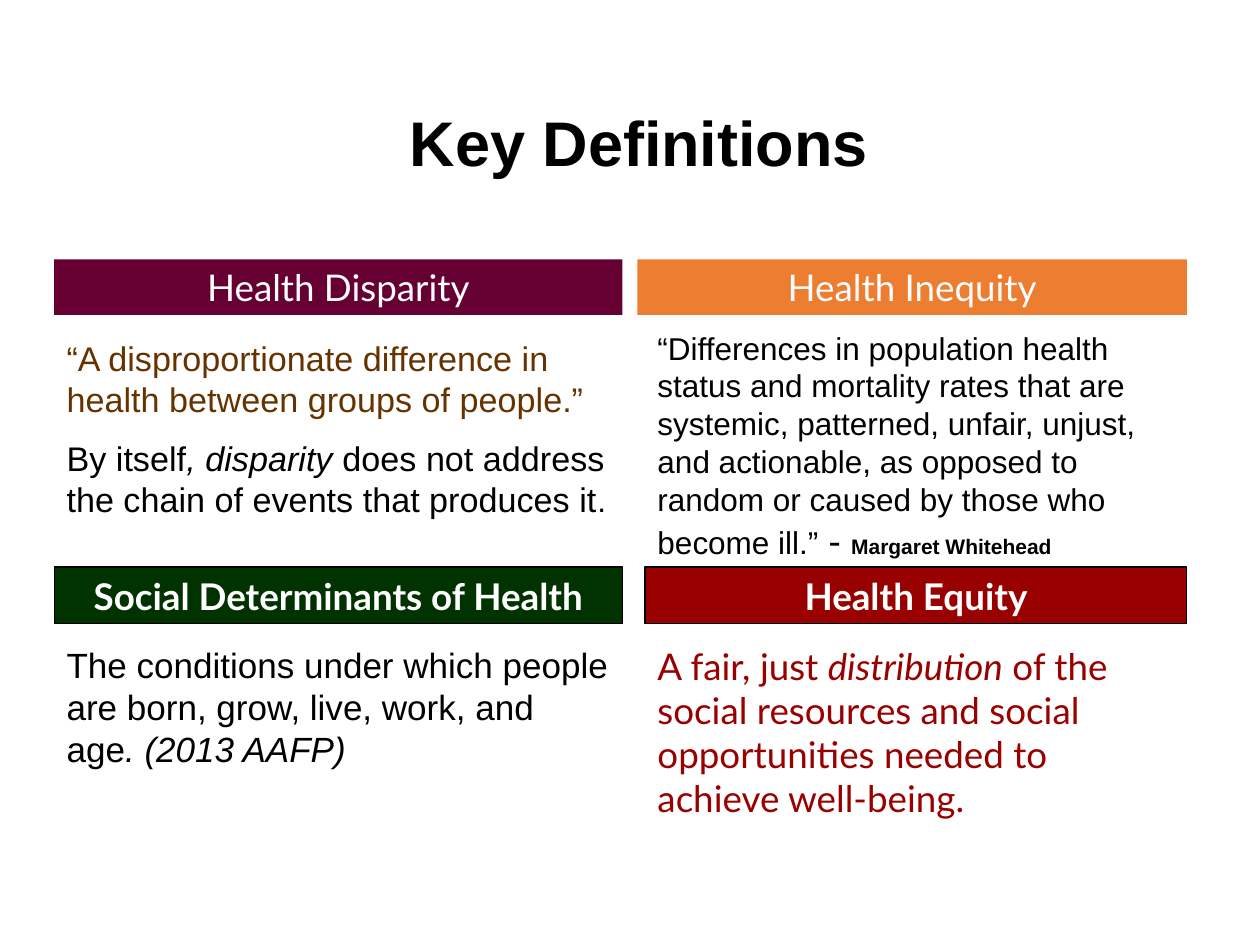
from dataclasses import dataclass
from typing import NamedTuple, Optional

from pptx import Presentation
from pptx.dml.color import RGBColor
from pptx.enum.shapes import MSO_SHAPE
from pptx.enum.text import MSO_ANCHOR, PP_ALIGN
from pptx.util import Inches, Pt

BLACK = RGBColor(0x00, 0x00, 0x00)
WHITE = RGBColor(0xFF, 0xFF, 0xFF)
PLUM = RGBColor(0x66, 0x00, 0x33)
ORANGE = RGBColor(0xED, 0x7D, 0x31)
GREEN = RGBColor(0x00, 0x33, 0x00)
RED = RGBColor(0x99, 0x00, 0x00)
BROWN = RGBColor(0x66, 0x33, 0x00)

SLIDE_WIDTH, SLIDE_HEIGHT = Inches(10), Inches(7.5)
GRID_COLUMNS, GRID_ROWS = 100, 75


class Area(NamedTuple):
    """A rectangle in grid columns and rows."""
    column: float
    row: float
    columns: float
    rows: float

    def lengths(self) -> tuple[int, int, int, int]:
        """Return left, top, width and height in slide units."""
        across, down = SLIDE_WIDTH / GRID_COLUMNS, SLIDE_HEIGHT / GRID_ROWS
        return (round(self.column * across), round(self.row * down),
                round(self.columns * across), round(self.rows * down))


class Phrase(NamedTuple):
    """A stretch of text in one format."""
    text: str
    size: float
    color: RGBColor = BLACK
    font: str = "Arial"
    bold: bool = False
    italic: bool = False


@dataclass(frozen=True)
class Definition:
    """A term on a coloured bar and its explanation below."""
    term: str
    bar: Area
    fill: RGBColor
    body: Area
    paragraphs: list[list[Phrase]]
    outline: Optional[RGBColor] = None
    bold: bool = False


LEFT, LEFT_SPAN = 4.3, 45.1
RIGHT, RIGHT_SPAN = 51.2, 43
WIDE_RIGHT, WIDE_RIGHT_SPAN = 50.6, 43.6
UPPER, UPPER_ROWS = 20.6, 4.4
LOWER, LOWER_ROWS = 45, 4.5
LOWER_BODY = 50.6

DEFINITIONS = [
    Definition(
        "Health Disparity", Area(LEFT, UPPER, LEFT_SPAN, UPPER_ROWS), PLUM,
        Area(LEFT, 26.3, LEFT_SPAN, 15.8),
        [[Phrase("“A disproportionate difference in health between groups of people.”",
                 19.5, BROWN)],
         [Phrase("By itself", 19.5),
          Phrase(", disparity ", 19.5, italic=True),
          Phrase("does not address the chain of events that produces it", 19.5),
          Phrase(".", 18)]]),
    Definition(
        "Health Inequity", Area(WIDE_RIGHT, UPPER, WIDE_RIGHT_SPAN, UPPER_ROWS), ORANGE,
        Area(RIGHT, 25.6, RIGHT_SPAN, 19.7),
        [[Phrase("“Differences in population health status and mortality rates that are "
                 "systemic, patterned, unfair, unjust, and actionable, as opposed to "
                 "random or caused by those who become ill.”", 18),
          Phrase(" - ", 21),
          Phrase("Margaret Whitehead", 12, bold=True)]]),
    Definition(
        "Social Determinants of Health", Area(LEFT, LOWER, LEFT_SPAN, LOWER_ROWS), GREEN,
        Area(LEFT, LOWER_BODY, LEFT_SPAN, 11.1),
        [[Phrase("The conditions under which people are born, grow, live, work, and age", 20),
          Phrase(". (2013 AAFP)", 20, italic=True)]],
        outline=BLACK, bold=True),
    Definition(
        "Health Equity", Area(RIGHT, LOWER, RIGHT_SPAN, LOWER_ROWS), RED,
        Area(RIGHT, LOWER_BODY, RIGHT_SPAN, 11.6),
        [[Phrase("A fair, just ", 21, RED, "Lato"),
          Phrase("distribution", 21, RED, "Lato", italic=True),
          Phrase(" of the social resources and social opportunities needed to "
                 "achieve well-being.", 21, RED, "Lato")]],
        outline=BLACK, bold=True),
]


def write(frame, paragraphs: list[list[Phrase]], *, align=PP_ALIGN.LEFT,
          anchor=MSO_ANCHOR.TOP, gap: float = 0) -> None:
    """Fill a text frame with formatted paragraphs."""
    frame.word_wrap = True
    frame.vertical_anchor = anchor
    for index, phrases in enumerate(paragraphs):
        paragraph = frame.add_paragraph() if index else frame.paragraphs[0]
        paragraph.alignment = align
        if index:
            paragraph.space_before = Pt(gap)
        for phrase in phrases:
            run = paragraph.add_run()
            run.text = phrase.text
            run.font.size = Pt(phrase.size)
            run.font.name = phrase.font
            run.font.bold = phrase.bold
            run.font.italic = phrase.italic
            run.font.color.rgb = phrase.color


def draw_text(slide, area: Area, paragraphs: list[list[Phrase]], **layout) -> None:
    """Place a text box on the slide."""
    write(slide.shapes.add_textbox(*area.lengths()).text_frame, paragraphs, **layout)


def draw_definition(slide, definition: Definition) -> None:
    """Draw a term bar and its explanation."""
    bar = slide.shapes.add_shape(MSO_SHAPE.RECTANGLE, *definition.bar.lengths())
    bar.shadow.inherit = False
    bar.fill.solid()
    bar.fill.fore_color.rgb = definition.fill
    if definition.outline is None:
        bar.line.fill.background()
    else:
        bar.line.color.rgb = definition.outline
        bar.line.width = Pt(0.75)
    term = Phrase(definition.term, 21, WHITE, "Lato", bold=definition.bold)
    write(bar.text_frame, [[term]], align=PP_ALIGN.CENTER, anchor=MSO_ANCHOR.MIDDLE)
    draw_text(slide, definition.body, definition.paragraphs, gap=10)


def main() -> None:
    """Build and save the slide."""
    deck = Presentation()
    deck.slide_width, deck.slide_height = SLIDE_WIDTH, SLIDE_HEIGHT
    slide = deck.slides.add_slide(deck.slide_layouts[6])
    draw_text(slide, Area(7.6, 4, 86.2, 14.5), [[Phrase("Key Definitions", 36, bold=True)]],
              align=PP_ALIGN.CENTER, anchor=MSO_ANCHOR.MIDDLE)
    for definition in DEFINITIONS:
        draw_definition(slide, definition)
    deck.save("out.pptx")


if __name__ == "__main__":
    main()
